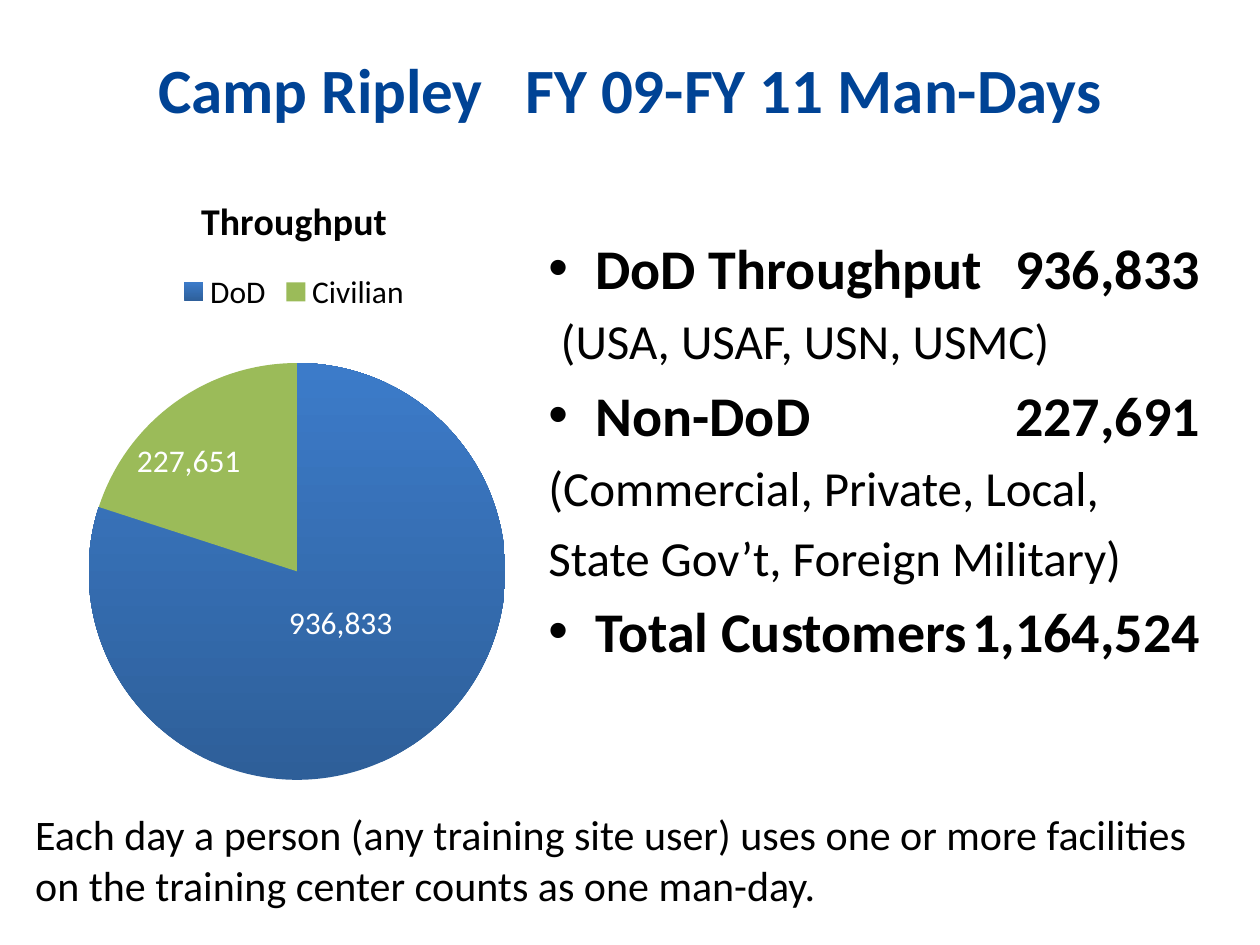
from dataclasses import dataclass

from lxml.etree import SubElement
from pptx import Presentation
from pptx.chart.data import CategoryChartData
from pptx.dml.color import RGBColor
from pptx.enum.chart import XL_CHART_TYPE as ChartType
from pptx.enum.chart import XL_LABEL_POSITION as LabelPosition
from pptx.enum.chart import XL_LEGEND_POSITION as LegendPosition
from pptx.enum.text import MSO_ANCHOR as Anchor
from pptx.enum.text import MSO_AUTO_SIZE as AutoSize
from pptx.enum.text import PP_ALIGN as Align
from pptx.oxml import parse_xml
from pptx.oxml.ns import nsdecls, qn
from pptx.util import Cm, Pt

FACE = "Calibri"
BLACK = "000000"
WHITE = "FFFFFF"
HANGING = 0.95
NUMBER_EDGE = 13.5


@dataclass
class Frame:
    left: float
    top: float
    width: float
    height: float

    def lengths(self) -> tuple:
        return Cm(self.left), Cm(self.top), Cm(self.width), Cm(self.height)


@dataclass
class Line:
    text: str
    bulleted: bool = False
    first_indent: float = 0


@dataclass
class Slice:
    name: str
    share: int
    label: str
    shift_x: float
    shift_y: float


LINES = [
    Line("DoD Throughput\t936,833", True),
    Line("(USA, USAF, USN, USMC)", first_indent=0.25),
    Line("Non-DoD\t227,691", True),
    Line("(Commercial, Private, Local,"),
    Line("State Gov’t, Foreign Military)"),
    Line("Total Customers\t1,164,524", True),
]
SLICES = [
    Slice("DoD", 80, "936,833", -0.03, -0.05),
    Slice("Civilian", 20, "227,651", -0.08, -0.04),
]


def color(value: str) -> RGBColor:
    return RGBColor.from_string(value)


def style(font, size: float, shade: str = BLACK, bold: bool = False) -> None:
    font.name = FACE
    font.size = Pt(size)
    font.bold = bold
    font.color.rgb = color(shade)


def place(shape, frame: Frame) -> None:
    shape.left, shape.top, shape.width, shape.height = frame.lengths()


def add_title(page) -> None:
    title = page.shapes.title
    place(title, Frame(1.27, 0.2, 22.86, 3.18))
    title.text_frame.vertical_anchor = Anchor.MIDDLE
    title.text_frame.auto_size = AutoSize.NONE
    para = title.text_frame.paragraphs[0]
    para.alignment = Align.CENTER
    for text in ("Camp Ripley", " ", "FY 09-FY 11 Man-Days"):
        span = para.add_run()
        span.text = text
        if text == " ":
            span.font._element.set("spc", "1600")
    style(para.font, 36, "004395", True)


def add_line(para, line: Line) -> None:
    para.text = line.text
    properties = para._p.get_or_add_pPr()
    properties.set("marL", str(Cm(HANGING)))
    properties.set("indent", str(Cm(line.first_indent - HANGING)))
    if line.bulleted:
        SubElement(properties, qn("a:buChar"), char="•")
        tabs = SubElement(properties, qn("a:tabLst"))
        SubElement(tabs, qn("a:tab"), pos=str(Cm(NUMBER_EDGE)), algn="r")
    else:
        SubElement(properties, qn("a:buNone"))
    size = 32 if line.bulleted else 28
    style(para.font, size, bold=line.bulleted)


def add_list(page) -> None:
    body = page.placeholders[1]
    place(body, Frame(10.8, 4.57, 14.6, 12.57))
    frame = body.text_frame
    frame.auto_size = AutoSize.NONE
    for index, line in enumerate(LINES):
        para = frame.add_paragraph() if index else frame.paragraphs[0]
        add_line(para, line)
        para.space_before = Pt(6 if index else 0)


def layout(x: float, y: float, extra: str = ""):
    return parse_xml(
        f'<c:layout {nsdecls("c")}><c:manualLayout>{extra}'
        f'<c:x val="{x}"/><c:y val="{y}"/></c:manualLayout></c:layout>'
    )


def set_plot_area(chart) -> None:
    area = chart._chartSpace.chart.plotArea
    for old in area.findall(qn("c:layout")):
        area.remove(old)
    edges = '<c:layoutTarget val="inner"/><c:xMode val="edge"/><c:yMode val="edge"/>'
    manual = layout(0.15, 0.3, edges)
    for tag, value in (("c:w", "0.71"), ("c:h", "0.64")):
        SubElement(manual[0], qn(tag), val=value)
    area.insert(0, manual)


def add_label(point, part: Slice) -> None:
    label = point.data_label
    para = label.text_frame.paragraphs[0]
    para.text = part.label
    style(para.font, 18, WHITE, True)
    label.position = LabelPosition.CENTER
    element = label._dLbl
    element.find(qn("c:idx")).addnext(layout(part.shift_x, part.shift_y))


def add_pie(page) -> None:
    data = CategoryChartData()
    data.categories = [part.name for part in SLICES]
    data.add_series("Throughput", [part.share for part in SLICES])
    frame = Frame(0, 3.38, 11.86, 13.13)
    chart = page.shapes.add_chart(ChartType.PIE, *frame.lengths(), data).chart
    style(chart.font, 18)
    chart.has_title = True
    para = chart.chart_title.text_frame.paragraphs[0]
    para.text = "Throughput"
    style(para.font, 21.6, bold=True)
    chart.has_legend = True
    chart.legend.position = LegendPosition.TOP
    chart.legend.include_in_layout = False
    style(chart.legend.font, 18)
    set_plot_area(chart)
    plot = chart.plots[0]
    plot.vary_by_categories = True
    points = plot.series[0].points
    for index, part in enumerate(SLICES):
        add_label(points[index], part)
    blue = points[0].format.fill
    blue.gradient()
    blue.gradient_angle = 90
    for stop, shade in zip(blue.gradient_stops, ("2E5F99", "3C7BC9")):
        stop.color.rgb = color(shade)
    green = points[1].format.fill
    green.solid()
    green.fore_color.rgb = color("9BBB59")


def add_note(page) -> None:
    box = page.shapes.add_textbox(*Frame(0.46, 16.18, 23.88, 2.31).lengths())
    box.text_frame.word_wrap = True
    para = box.text_frame.paragraphs[0]
    para.text = (
        "Each day a person (any training site user) uses one or more facilities "
        "on the training center counts as one man-day."
    )
    style(para.font, 24)


def main() -> None:
    deck = Presentation()
    deck.slide_width, deck.slide_height = Cm(25.4), Cm(19.05)
    page = deck.slides.add_slide(deck.slide_layouts[1])
    add_title(page)
    add_pie(page)
    add_list(page)
    add_note(page)
    deck.save("out.pptx")


if __name__ == "__main__":
    main()
